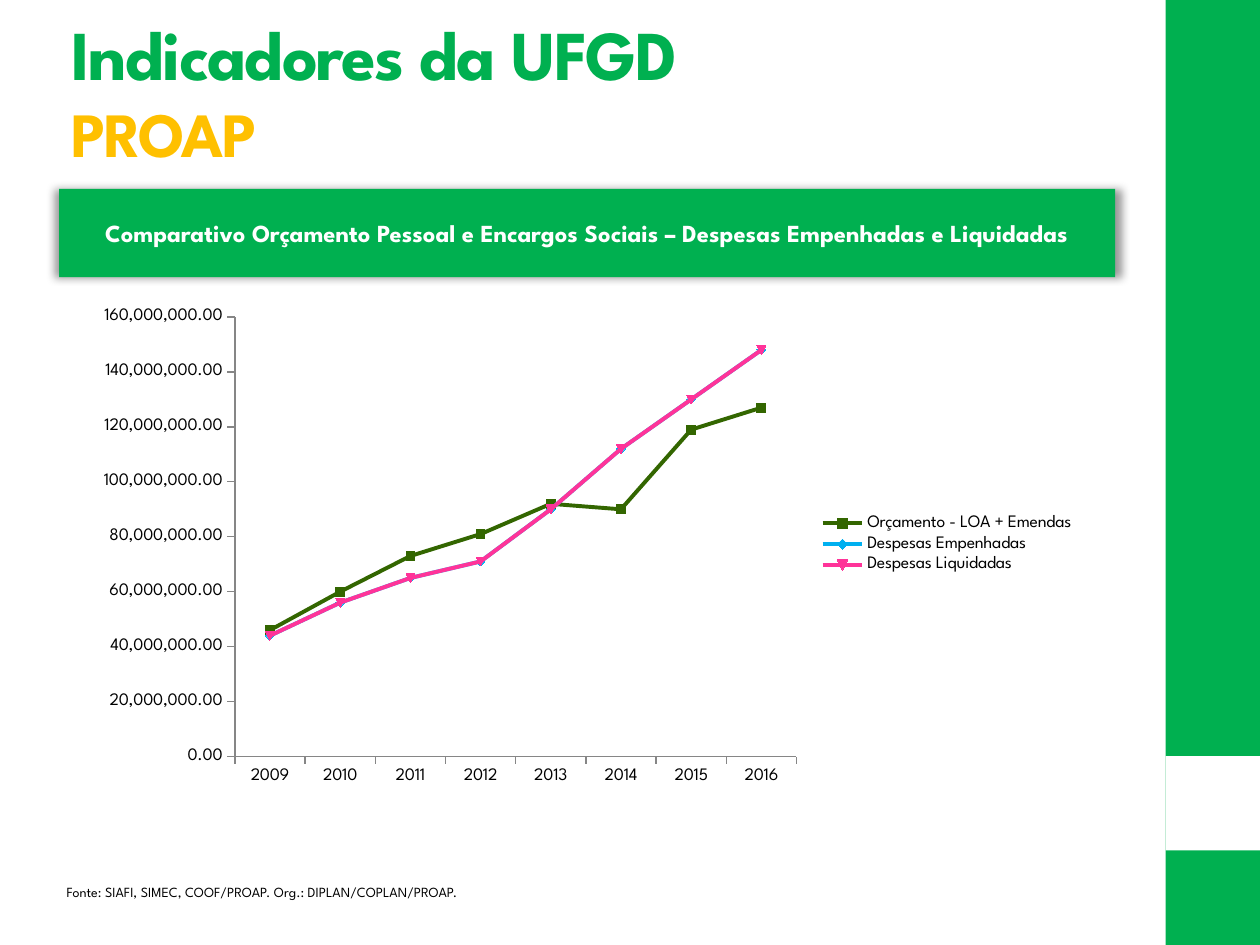
"""Builds the PROAP slide comparing personnel budget with committed and settled expenses."""
from dataclasses import dataclass

from lxml import etree
from pptx import Presentation
from pptx.chart.data import CategoryChartData
from pptx.dml.color import RGBColor
from pptx.enum.chart import XL_CHART_TYPE, XL_LEGEND_POSITION, XL_TICK_MARK
from pptx.enum.shapes import MSO_SHAPE
from pptx.enum.text import MSO_ANCHOR, MSO_AUTO_SIZE, PP_ALIGN
from pptx.oxml import parse_xml
from pptx.oxml.ns import nsdecls, qn
from pptx.util import Pt

RECT = MSO_SHAPE.RECTANGLE
LINE_MARKERS = XL_CHART_TYPE.LINE_MARKERS
RIGHT = XL_LEGEND_POSITION.RIGHT
OUTSIDE = XL_TICK_MARK.OUTSIDE
MIDDLE, TOP = MSO_ANCHOR.MIDDLE, MSO_ANCHOR.TOP
LEFT, CENTER = PP_ALIGN.LEFT, PP_ALIGN.CENTER
NO_FIT = MSO_AUTO_SIZE.NONE


@dataclass(frozen=True)
class Theme:
    font: str = "League Spartan"
    green: str = "00B050"
    gold: str = "FFC000"
    white: str = "FFFFFF"
    black: str = "000000"
    axis: str = "868686"
    title: int = 40
    subtitle: int = 36
    banner: int = 14
    chart: int = 10
    source: int = 8


T = Theme()

TITLE, SUBTITLE = "Indicadores da UFGD", "PROAP"
BANNER = "Comparativo Orçamento Pessoal e Encargos Sociais – Despesas Empenhadas e Liquidadas"
SOURCE = "Fonte: SIAFI, SIMEC, COOF/PROAP. Org.: DIPLAN/COPLAN/PROAP."
YEARS = [str(year) for year in range(2009, 2017)]
EXPENSES = [44, 56, 65, 71, 90, 112, 130, 148]
SERIES = [
    ("Orçamento - LOA + Emendas", "336600", [46, 60, 73, 81, 92, 90, 119, 127]),
    ("Despesas Empenhadas", "00B0F0", EXPENSES),
    ("Despesas Liquidadas", "FF3399", EXPENSES),
]
MILLION = 1_000_000

WIDTH, HEIGHT, STRIPE = 720, 540, 54
STRIPES = [
    ((WIDTH - STRIPE, 0, STRIPE, HEIGHT), T.green),
    ((WIDTH - STRIPE, HEIGHT - 2 * STRIPE, STRIPE, STRIPE), T.white),
]
TITLE_BOX = (33.84, 6.48, 599.76, 90)
BANNER_BOX = (33.84, 108, 603.36, 50.4)
CHART_BOX = (48.24, 169.92, 573.12, 282.24)
SOURCE_BOX = (30.96, 501.12, 617.76, 17.28)
PLOT = {"x": 0.15, "y": 0.04, "w": 0.56, "h": 0.89}


def points(box):
    return [Pt(v) for v in box]


def rgb(color):
    return RGBColor.from_string(color)


def style(font, size, color, bold=False):
    font.name, font.size, font.bold = T.font, Pt(size), bold
    font.color.rgb = rgb(color)


def add_rect(s, box, color):
    sp = s.shapes.add_shape(RECT, *points(box))
    sp.shadow.inherit = False
    sp.fill.solid()
    sp.fill.fore_color.rgb = rgb(color)
    sp.line.fill.background()
    return sp


def set_text(sp, text, looks, anchor, align):
    tf = sp.text_frame
    tf.text = text
    tf.word_wrap, tf.auto_size, tf.vertical_anchor = True, NO_FIT, anchor
    p = tf.paragraphs[0]
    p.alignment = align
    for r, look in zip(p.runs, looks):
        style(r.font, *look)
    return p


def add_title(s):
    sp = s.shapes.title
    sp.left, sp.top, sp.width, sp.height = points(TITLE_BOX)
    looks = [(T.title, T.green, True), (T.subtitle, T.gold, True)]
    p = set_text(sp, f"{TITLE}\v{SUBTITLE}", looks, MIDDLE, LEFT)
    for r in p.runs:
        r.font._element.set("spc", "-100")


def add_banner(s):
    sp = add_rect(s, BANNER_BOX, T.green)
    set_text(sp, BANNER, [(T.banner, T.white, True)], MIDDLE, CENTER)
    effects = sp._element.spPr.find(qn("a:effectLst"))
    effects.append(parse_xml(
        f'<a:outerShdw {nsdecls("a")} blurRad="{Pt(5)}" sx="101000" algn="ctr" rotWithShape="0">'
        f'<a:srgbClr val="{T.black}"><a:alpha val="40000"/></a:srgbClr></a:outerShdw>'))


def place_plot(chart):
    area = chart._chartSpace.chart.plotArea
    for old in area.findall(qn("c:layout")):
        area.remove(old)
    layout = etree.Element(qn("c:layout"))
    manual = etree.SubElement(layout, qn("c:manualLayout"))
    settings = {"layoutTarget": "inner", "xMode": "edge", "yMode": "edge", **PLOT}
    for tag, value in settings.items():
        etree.SubElement(manual, qn(f"c:{tag}")).set("val", str(value))
    area.insert(0, layout)


def add_budget_chart(s):
    data = CategoryChartData(number_format="#,##0.00")
    data.categories = YEARS
    for name, _, values in SERIES:
        data.add_series(name, [v * MILLION for v in values])
    chart = s.shapes.add_chart(LINE_MARKERS, *points(CHART_BOX), data).chart
    style(chart.font, T.chart, T.black)
    chart.has_title = False
    chart.has_legend = True
    chart.legend.position = RIGHT
    chart.legend.include_in_layout = False
    for axis in (chart.category_axis, chart.value_axis):
        axis.major_tick_mark = OUTSIDE
        axis.has_major_gridlines = False
        axis.format.line.color.rgb = rgb(T.axis)
        axis.format.line.width = Pt(0.75)
    axis = chart.value_axis
    axis.minimum_scale, axis.maximum_scale, axis.major_unit = 0, 160 * MILLION, 20 * MILLION
    axis.tick_labels.number_format = "#,##0.00"
    axis.tick_labels.number_format_is_linked = False
    for series, (_, color, _) in zip(chart.plots[0].series, SERIES):
        series.smooth = False
        series.format.line.color.rgb = rgb(color)
        series.format.line.width = Pt(2.25)
        marker = series.marker
        marker.size = 5
        marker.format.fill.solid()
        marker.format.fill.fore_color.rgb = rgb(color)
        marker.format.line.color.rgb = rgb(color)
    place_plot(chart)


def add_source(s):
    sp = s.shapes.add_textbox(*points(SOURCE_BOX))
    set_text(sp, SOURCE, [(T.source, T.black)], TOP, LEFT)


def main():
    prs = Presentation()
    prs.slide_width, prs.slide_height = Pt(WIDTH), Pt(HEIGHT)
    s = prs.slides.add_slide(prs.slide_layouts[5])
    for box, color in STRIPES:
        add_rect(s, box, color)
    add_budget_chart(s)
    add_title(s)
    add_banner(s)
    add_source(s)
    prs.save("out.pptx")


if __name__ == "__main__":
    main()
